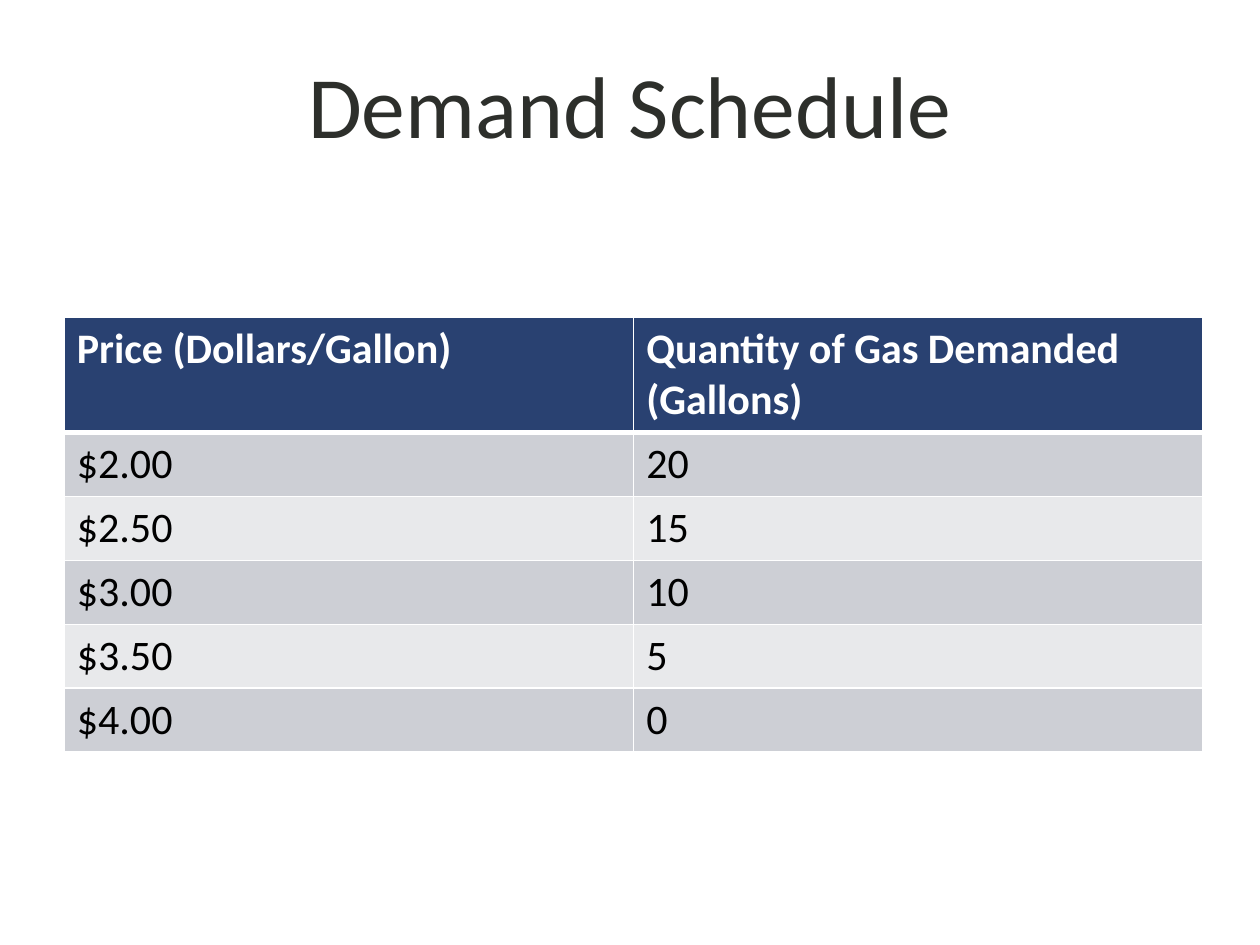
import pptx
import pptx.dml.color
import pptx.enum.text
import pptx.oxml.ns
import pptx.util
from lxml import etree
from pptx.util import Inches

FONT = "Calibri"
WHITE = "FFFFFF"
HEADER_FILL = "294171"
BAND_FILLS = ("CDCFD5", "E8E9EB")

DEMAND_SCHEDULE = [
    ("Price (Dollars/Gallon)", "Quantity of Gas Demanded (Gallons)"),
    ("$2.00", "20"),
    ("$2.50", "15"),
    ("$3.00", "10"),
    ("$3.50", "5"),
    ("$4.00", "0"),
]


def color(hex_string):
    return pptx.dml.color.RGBColor.from_string(hex_string)


def format_text(text_frame, size, hex_string, bold=False):
    for paragraph in text_frame.paragraphs:
        for run in paragraph.runs:
            run.font.name = FONT
            run.font.size = pptx.util.Pt(size)
            run.font.bold = bold
            run.font.color.rgb = color(hex_string)


def add_title(slide, text):
    title = slide.shapes.title
    title.left, title.top = Inches(0.75), Inches(0.07)
    title.width, title.height = Inches(8.5), Inches(1.5)
    title.text_frame.text = text
    title.text_frame.vertical_anchor = pptx.enum.text.MSO_ANCHOR.MIDDLE
    title.text_frame.paragraphs[0].alignment = pptx.enum.text.PP_ALIGN.CENTER
    format_text(title.text_frame, 50, "2D2F2B")


def set_borders(cell, top, bottom):
    """Draw white borders; top and bottom widths are in points."""
    properties = cell._tc.get_or_add_tcPr()
    qualified = pptx.oxml.ns.qn
    for side, width in (("L", 1), ("R", 1), ("T", top), ("B", bottom)):
        line = etree.SubElement(properties, qualified(f"a:ln{side}"),
                                w=str(pptx.util.Pt(width)))
        fill = etree.SubElement(line, qualified("a:solidFill"))
        etree.SubElement(fill, qualified("a:srgbClr"), val=WHITE)


def format_cell(cell, row_index):
    is_header = row_index == 0
    # The rule under the header is shared with the first body row
    set_borders(cell, top=3 if row_index == 1 else 1, bottom=3 if is_header else 1)
    cell.fill.solid()
    cell.fill.fore_color.rgb = color(
        HEADER_FILL if is_header else BAND_FILLS[(row_index - 1) % 2])
    format_text(cell.text_frame, 24, WHITE if is_header else "000000", is_header)


def add_schedule_table(slide, rows):
    frame = slide.shapes.add_table(len(rows), len(rows[0]), Inches(0.51),
                                   Inches(2.52), Inches(9.04), Inches(3.4))
    table = frame.table
    for row_index, values in enumerate(rows):
        table.rows[row_index].height = Inches(0.5 if row_index else 0.9)
        for column_index, value in enumerate(values):
            cell = table.cell(row_index, column_index)
            cell.text_frame.text = value
            format_cell(cell, row_index)


def main():
    presentation = pptx.Presentation()
    presentation.slide_width = Inches(10)
    presentation.slide_height = Inches(7.5)

    # Title-only layout
    slide = presentation.slides.add_slide(presentation.slide_layouts[5])
    add_title(slide, "Demand Schedule")
    add_schedule_table(slide, DEMAND_SCHEDULE)
    presentation.save("out.pptx")


if __name__ == "__main__":
    main()
